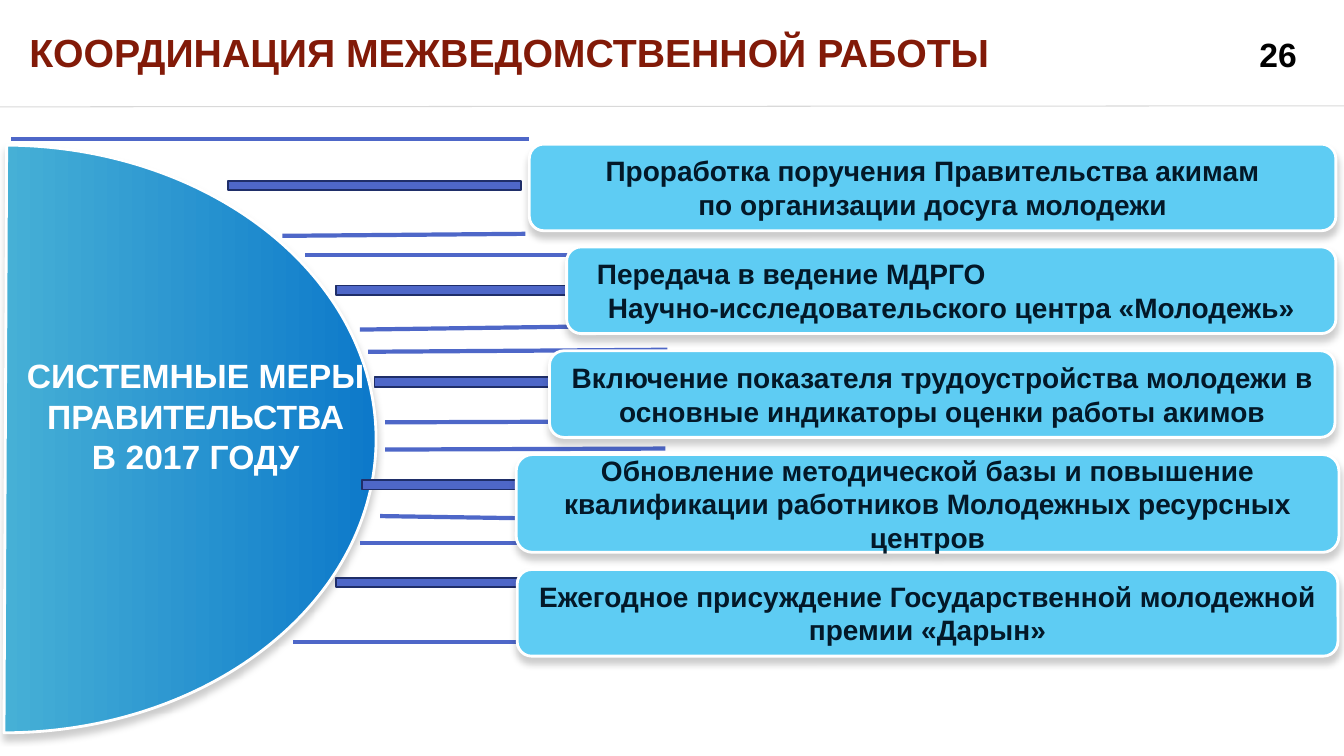
from copy import deepcopy

from lxml import etree
from pptx import Presentation
from pptx import util as u
from pptx.dml.color import RGBColor
from pptx.enum import shapes, text
from pptx.oxml import ns

PX = 9144
LEFT, CENTER, RIGHT = text.PP_ALIGN.LEFT, text.PP_ALIGN.CENTER, text.PP_ALIGN.RIGHT

MEASURES = ["СИСТЕМНЫЕ МЕРЫ", "ПРАВИТЕЛЬСТВА", "В 2017 ГОДУ"]
RAYS = [
    (11, 138, 525, 138), (280, 234, 521, 232), (303, 253, 569, 253),
    (357, 327, 574, 324), (365, 349, 662, 347), (382, 419, 662, 418),
    (382, 446, 660, 445), (377, 512, 574, 515), (357, 539, 574, 539),
    (291, 637, 519, 637),
]
BARS = [(174, 164, 395), (291, 268, 318), (319, 359, 395), (318, 461, 308), (291, 558, 318)]
CARDS = [
    ((525, 143, 800, 86),
     ["Проработка поручения Правительства акимам", "по организации досуга молодежи"], {}),
    ((562, 245, 763, 86),
     ["Передача в ведение МДРГО", "Научно-исследовательского центра «Молодежь»"],
     {"first_align": LEFT, "first_margin": 16}),
    ((545, 348, 779, 86),
     ["Включение показателя трудоустройства молодежи в основные индикаторы оценки работы акимов"], {}),
    ((512, 451, 816, 97),
     ["Обновление методической базы и повышение квалификации работников "
      "Молодежных ресурсных центров"], {}),
    ((513, 565, 814, 86),
     ["Ежегодное присуждение Государственной молодежной", "премии «Дарын»"], {}),
]


def px(*lengths):
    return [u.Emu(length * PX) for length in lengths]


def rgb(value):
    return RGBColor.from_string(value)


def write(shape, lines, size=20, color="000000", align=CENTER, wrap=True,
          first_align=None, first_margin=0, font="Arial"):
    frame = shape.text_frame
    frame.auto_size = text.MSO_AUTO_SIZE.NONE
    frame.word_wrap = wrap
    frame.vertical_anchor = text.MSO_ANCHOR.MIDDLE
    for index, line in enumerate(lines):
        paragraph = frame.add_paragraph() if index else frame.paragraphs[0]
        paragraph.alignment = align
        run = paragraph.add_run()
        run.text = line
        run.font.name, run.font.size, run.font.bold = font, u.Pt(size), True
        run.font.color.rgb = rgb(color)
    if first_align is not None:
        first = frame.paragraphs[0]
        first.alignment = first_align
        first._p.get_or_add_pPr().set("marL", str(first_margin * PX))


class Board:
    accent, accent_edge = "4E67C8", "1F2E69"
    card_fill, card_text, white = "5ECCF3", "031828", "FFFFFF"

    def __init__(self, presentation):
        self.slide = presentation.slides.add_slide(presentation.slide_layouts[5])

    def title(self, line, box):
        title = self.slide.shapes.title
        title.left, title.top, title.width, title.height = px(*box)
        title.fill.solid()
        title.fill.fore_color.rgb = rgb(self.white)
        write(title, [line], size=28, color="821A08", align=LEFT)

    def label(self, lines, box, **style):
        write(self.slide.shapes.add_textbox(*px(*box)), lines, size=24, **style)

    def shape(self, kind, box, fill, edge, width):
        shape = self.slide.shapes.add_shape(kind, *px(*box))
        shape.shadow.inherit = False
        shape.fill.solid()
        shape.fill.fore_color.rgb = rgb(fill)
        shape.line.color.rgb = rgb(edge)
        shape.line.width = u.Pt(width)
        return shape

    def raised(self, kind, box):
        shape = self.shape(kind, box, self.card_fill, self.white, 2)
        effects = shape._element.spPr.find(ns.qn("a:effectLst"))
        shadow = etree.SubElement(effects, ns.qn("a:outerShdw"), blurRad=str(u.Pt(5)),
                                  dist=str(u.Pt(4)), dir="5400000", rotWithShape="0")
        color = etree.SubElement(shadow, ns.qn("a:srgbClr"), val="000000")
        etree.SubElement(color, ns.qn("a:alpha"), val="20000")
        return shape

    def chord(self, box, stops):
        chord = self.raised(shapes.MSO_SHAPE.CHORD, box)
        chord.adjustments[0], chord.adjustments[1] = 162.31, 54
        chord.fill.gradient()
        chord.fill.gradient_angle = 180
        stop_list = chord._element.spPr.find(".//" + ns.qn("a:gsLst"))
        for _ in range(len(stops) - len(stop_list)):
            stop_list.append(deepcopy(stop_list[0]))
        for stop, (position, color) in zip(chord.fill.gradient_stops, stops):
            stop.position = position
            stop.color.rgb = rgb(color)

    def line(self, ends, color=accent, width=3):
        line = self.slide.shapes.add_connector(shapes.MSO_CONNECTOR.STRAIGHT, *px(*ends))
        line.line.color.rgb = rgb(color)
        line.line.width = u.Pt(width)
        etree.SubElement(line._element.spPr, ns.qn("a:effectLst"))

    def bar(self, left, top, width):
        self.shape(shapes.MSO_SHAPE.MATH_MINUS, (left, top, width, 40),
                   self.accent, self.accent_edge, 1.25)

    def card(self, box, lines, **style):
        card = self.raised(shapes.MSO_SHAPE.ROUNDED_RECTANGLE, box)
        write(card, lines, color=self.card_text, **style)


def main():
    presentation = Presentation()
    presentation.slide_width, presentation.slide_height = px(1333, 750)
    board = Board(presentation)
    board.title("КООРДИНАЦИЯ МЕЖВЕДОМСТВЕННОЙ РАБОТЫ", (19, 23, 994, 57))
    board.line((0, 106, 1333, 105), color="D9D9D9", width=0.75)
    board.label(["26"], (1227, 28, 69, 51), align=RIGHT)
    board.chord((-365, 144, 738, 583),
                [(0, "0D79CA"), (0.5, "46B0D6"), (0.9, "0C779D"), (1, "0C779D")])
    board.label(MEASURES, (10, 347, 368, 131), color=board.white, wrap=False)
    for ray in RAYS:
        board.line(ray)
    for bar in BARS:
        board.bar(*bar)
    for box, lines, style in CARDS:
        board.card(box, lines, **style)
    presentation.save("out.pptx")


if __name__ == "__main__":
    main()
